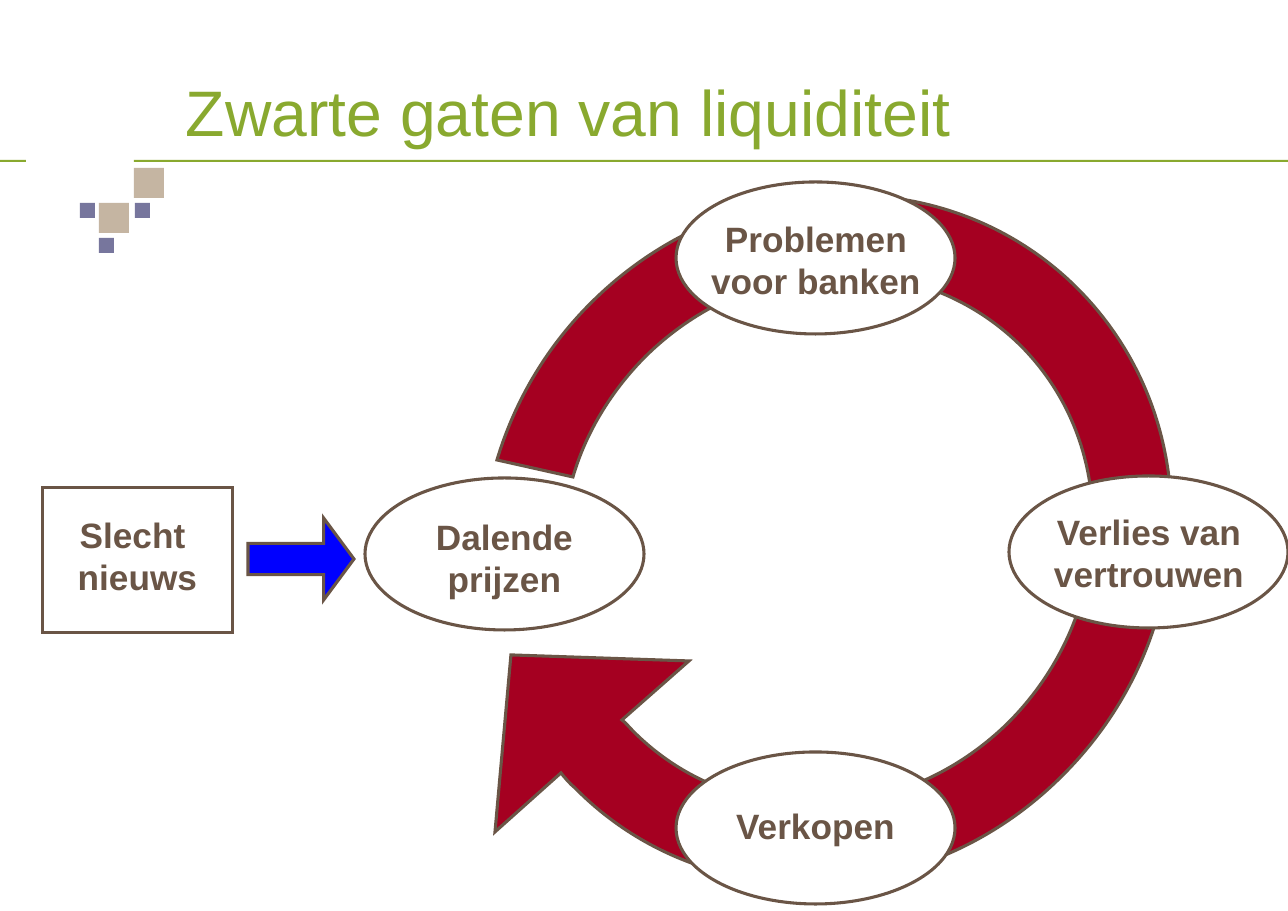
from typing import NamedTuple

from lxml.etree import SubElement
from pptx import Presentation
from pptx.dml.color import RGBColor
from pptx.enum.shapes import MSO_SHAPE
from pptx.enum.text import MSO_ANCHOR, PP_ALIGN
from pptx.oxml.ns import qn
from pptx.util import Pt

PX = 8298  # EMU per px
INK = {
    "green": "89A92F",
    "violet": "77769D",
    "sand": "C5B5A2",
    "brown": "6A5546",
    "red": "A50021",
    "blue": "0000FF",
    "white": "FFFFFF",
}


class Box(NamedTuple):
    x: int
    y: int
    w: int
    h: int


class Block(NamedTuple):
    box: Box
    fill: str


class Node(NamedTuple):
    kind: MSO_SHAPE
    box: Box
    fill: str | None
    text: str
    label: Box


SMALL, LARGE = 15, 30
DECOR = [
    Block(Box(0, 160, 26, 2), "green"),
    Block(Box(134, 160, 1154, 2), "green"),
    Block(Box(80, 203, SMALL, SMALL), "violet"),
    Block(Box(134, 168, LARGE, LARGE), "sand"),
    Block(Box(99, 203, LARGE, LARGE), "sand"),
    Block(Box(99, 238, SMALL, SMALL), "violet"),
    Block(Box(135, 203, SMALL, SMALL), "violet"),
]

OVAL = MSO_SHAPE.OVAL
NODES = [
    Node(OVAL, Box(676, 182, 279, 152), "white",
         "Problemen voor banken", Box(687, 211, 258, 98)),
    Node(OVAL, Box(365, 478, 279, 152), "white",
         "Dalende prijzen", Box(408, 509, 193, 98)),
    Node(OVAL, Box(1009, 476, 279, 152), "white",
         "Verlies van vertrouwen", Box(1031, 504, 236, 98)),
    Node(OVAL, Box(676, 752, 279, 152), "white",
         "Verkopen", Box(719, 798, 193, 55)),
    Node(MSO_SHAPE.RECTANGLE, Box(43, 488, 190, 145), None,
         "Slecht \nnieuws", Box(41, 507, 193, 98)),
]

# Each part is a line (one point) or a Bézier curve (two handles, one end).
FRAME = Box(495, 196, 674, 680)
START = (622, 720)
CYCLE = [
    [(626, 723), (629, 727), (633, 731)],
    [(733, 832), (900, 829), (1008, 723)],
    [(1115, 616), (1122, 449), (1022, 347)],
    [(921, 246), (754, 250), (646, 356)],
    [(612, 390), (586, 432), (573, 477)],
    [(497, 460)],
    [(515, 400), (548, 345), (593, 301)],
    [(732, 164), (950, 159), (1079, 290)],
    [(1209, 422), (1201, 639), (1061, 777)],
    [(922, 915), (704, 919), (575, 788)],
    [(570, 784), (565, 778), (561, 773)],
    [(495, 832)],
    [(511, 655)],
    [(689, 661)],
]


def emu(box: Box) -> list[int]:
    return [n * PX for n in box]


def rgb(name: str) -> RGBColor:
    return RGBColor.from_string(INK[name])


def paint(shape, fill: str | None, line: str | None = None) -> None:
    shape.shadow.inherit = False
    if fill:
        shape.fill.solid()
        shape.fill.fore_color.rgb = rgb(fill)
    else:
        shape.fill.background()
    if line:
        shape.line.color.rgb = rgb(line)
        shape.line.width = Pt(2)
        edge = shape.element.spPr.find(qn("a:ln"))
        SubElement(edge, qn("a:miter"), lim="800000")
    else:
        shape.line.fill.background()


def draw(slide, kind: MSO_SHAPE, box: Box, fill: str | None,
         line: str | None = None):
    shape = slide.shapes.add_shape(kind, *emu(box))
    paint(shape, fill, line)
    return shape


def write(slide, text: str, box: Box, *, size: int, color: str,
          bold: bool = False, align=PP_ALIGN.LEFT, anchor=MSO_ANCHOR.TOP,
          pad: tuple[int, int] = (0, 0)) -> None:
    frame = slide.shapes.add_textbox(*emu(box)).text_frame
    frame.word_wrap = True
    frame.vertical_anchor = anchor
    frame.margin_left = frame.margin_right = pad[0] * PX
    frame.margin_top = frame.margin_bottom = pad[1] * PX
    para = frame.paragraphs[0]
    para.text = text
    para.alignment = align
    font = para.font
    font.name, font.size, font.bold = "Arial", Pt(size), bold
    font.color.rgb = rgb(color)


def step(route, tag: str, dots: list[tuple[int, int]]) -> None:
    """Add one drawing command, with its points relative to the frame."""
    move = SubElement(route, qn(tag))
    for x, y in dots:
        SubElement(move, qn("a:pt"), x=str(x - FRAME.x), y=str(y - FRAME.y))


def cycle(slide) -> None:
    """Draw the round arrow: a framed freeform given a curved outline."""
    x, y, w, h = FRAME
    pen = slide.shapes.build_freeform(x, y, scale=PX)
    pen.add_line_segments([(x + w, y), (x + w, y + h), (x, y + h)])
    shape = pen.convert_to_shape()
    route = next(shape.element.iter(qn("a:path")))
    for child in list(route):
        route.remove(child)
    step(route, "a:moveTo", [START])
    for part in CYCLE:
        step(route, "a:lnTo" if len(part) == 1 else "a:cubicBezTo", part)
    SubElement(route, qn("a:close"))
    paint(shape, "red", "brown")


def main() -> None:
    deck = Presentation()
    deck.slide_width, deck.slide_height = 1288 * PX, 911 * PX
    slide = deck.slides.add_slide(deck.slide_layouts[6])

    for block in DECOR:
        draw(slide, MSO_SHAPE.RECTANGLE, block.box, block.fill)
    write(slide, "Zwarte gaten van liquiditeit", Box(186, 72, 1074, 77),
          size=42, color="green", anchor=MSO_ANCHOR.BOTTOM)

    arrow = draw(slide, MSO_SHAPE.DOWN_ARROW, Box(260, 506, 82, 106),
                 "blue", "brown")
    arrow.rotation = 270
    arrow.adjustments[0], arrow.adjustments[1] = 0.38, 0.37

    cycle(slide)
    for node in NODES:
        draw(slide, node.kind, node.box, node.fill, "brown")
        write(slide, node.text, node.label, size=23, color="brown",
              bold=True, align=PP_ALIGN.CENTER, pad=(12, 6))

    deck.save("out.pptx")


if __name__ == "__main__":
    main()
